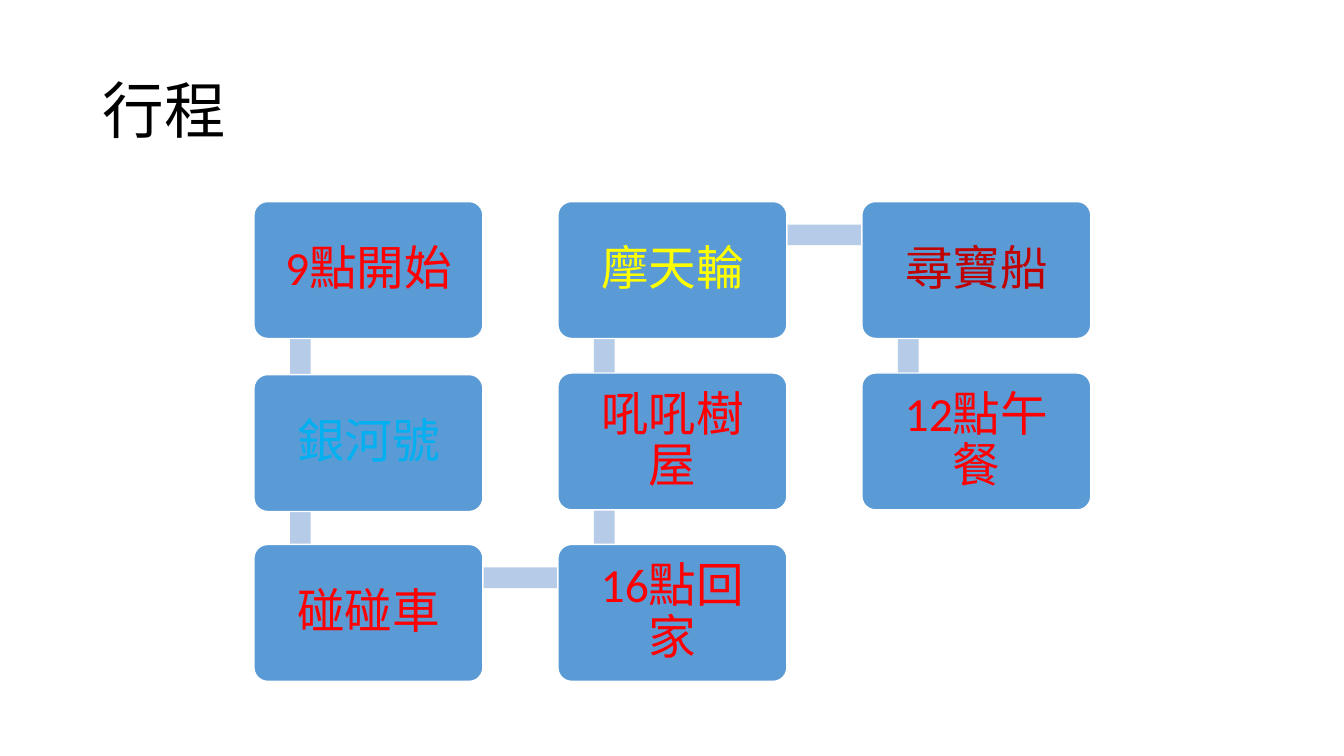
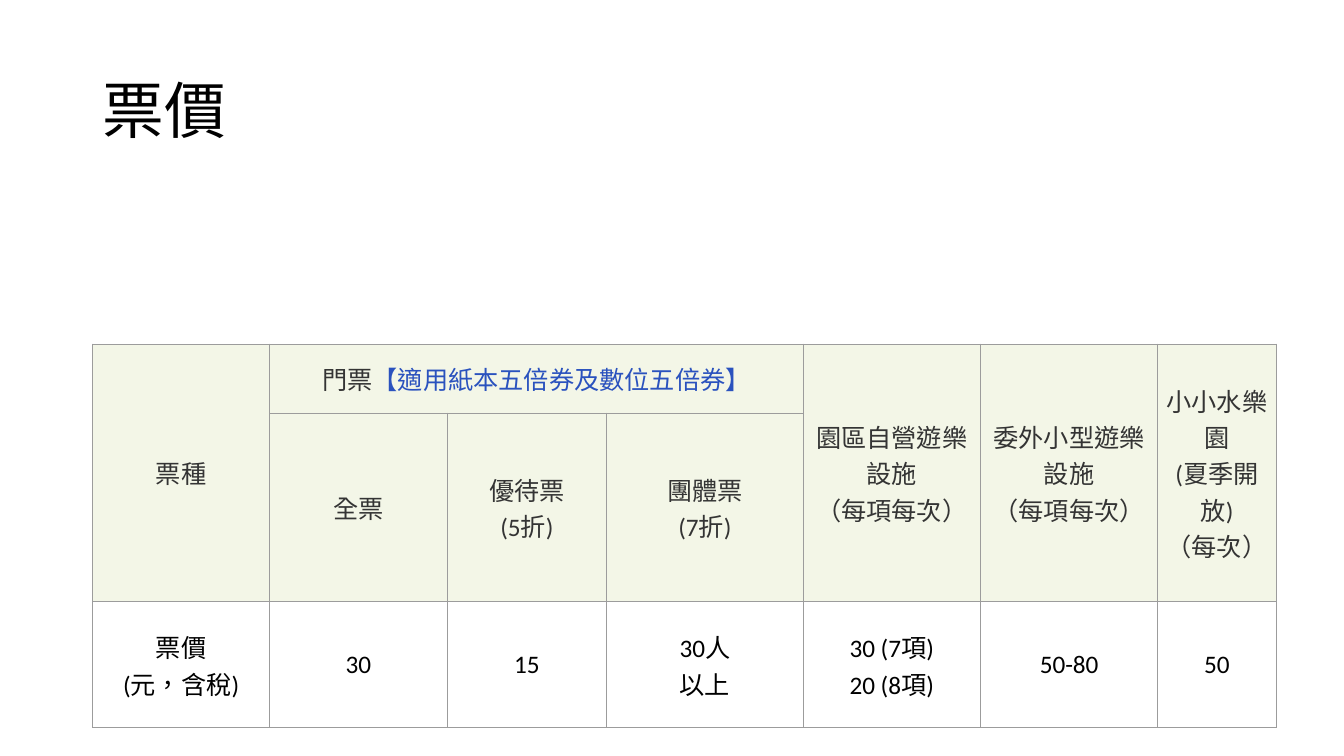
from dataclasses import dataclass
from typing import Any

from lxml import etree
from pptx import Presentation
from pptx import util as u
from pptx.dml.color import RGBColor
from pptx.enum import lang, shapes, text
from pptx.oxml import ns

COLORS = {
    "black": "000000", "white": "FFFFFF", "red": "FF0000", "dark_red": "C00000",
    "yellow": "FFFF00", "sky": "00B0F0", "box": "5B9BD5", "bar": "B5CBE7",
    "heading": "343434", "note": "2A52BE", "heading_fill": "F3F6E7", "border": "9C9C9C",
}
FONT = {"name": "Calibri", "language_id": lang.MSO_LANGUAGE_ID.TRADITIONAL_CHINESE}
TITLE_FRAME = {
    "vertical_anchor": text.MSO_ANCHOR.MIDDLE,
    "auto_size": text.MSO_AUTO_SIZE.NONE,
    "word_wrap": True,
}
MARGINS = ("margin_left", "margin_top", "margin_right", "margin_bottom")
STOP_FRAME = {
    "vertical_anchor": text.MSO_ANCHOR.MIDDLE,
    "word_wrap": True,
    **dict.fromkeys(MARGINS, u.Cm(0.46)),
}
CELL_FORMAT = {
    "vertical_anchor": text.MSO_ANCHOR.MIDDLE,
    **dict.fromkeys(MARGINS, u.Cm(0.08)),
}
TITLE_PLACE = {
    "left": u.Cm(2.33), "top": u.Cm(1.01), "width": u.Cm(29.21), "height": u.Cm(3.68),
}

GRID_LEFT, GRID_TOP = 6.4, 5.08
COLUMN_STEP, ROW_STEP = 7.66, 4.32
BOX_WIDTH, BOX_HEIGHT = 5.77, 3.45
JOINT_X, JOINT_Y = 1.17, 0.84
BAR_THICKNESS = 0.52

COLUMN_WIDTHS = (4.47, 4.47, 4.02, 4.95, 4.47, 4.47, 2.98)
ROW_HEIGHTS = (1.74, 4.72, 3.17)


@dataclass(frozen=True)
class Stop:
    label: str
    column: int
    row: int
    color: str = "red"
    shift: float = 0

    @property
    def left(self) -> float:
        return GRID_LEFT + self.column * COLUMN_STEP

    @property
    def top(self) -> float:
        return GRID_TOP + self.row * ROW_STEP + self.shift


@dataclass(frozen=True)
class Cell:
    row: int
    column: int
    label: str
    rows: int = 1
    columns: int = 1
    note: str = ""


STOPS = (
    Stop("9點開始", 0, 0),
    Stop("銀河號", 0, 1, "sky", 0.04),
    Stop("碰碰車", 0, 2),
    Stop("16點回家", 1, 2),
    Stop("吼吼樹屋", 1, 1),
    Stop("摩天輪", 1, 0, "yellow"),
    Stop("尋寶船", 2, 0, "dark_red"),
    Stop("12點午餐", 2, 1),
)
CELLS = (
    Cell(0, 0, "票種", rows=2),
    Cell(0, 1, "門票", columns=3, note="【適用紙本五倍券及數位五倍券】"),
    Cell(0, 4, "園區自營遊樂設施\v（每項每次）", rows=2),
    Cell(0, 5, "委外小型遊樂設施\v（每項每次）", rows=2),
    Cell(0, 6, "小小水樂園\v(夏季開放)\v（每次）", rows=2),
    Cell(1, 1, "全票"),
    Cell(1, 2, "優待票\v(5折)"),
    Cell(1, 3, "團體票\v(7折)"),
    Cell(2, 0, "票價\v(元，含稅)"),
    Cell(2, 1, "30"),
    Cell(2, 2, "15"),
    Cell(2, 3, "30人\v以上"),
    Cell(2, 4, "30 (7項)\n20 (8項)"),
    Cell(2, 5, "50-80"),
    Cell(2, 6, "50"),
)


def rgb(color: str) -> RGBColor:
    return RGBColor.from_string(COLORS[color])


def apply(target: Any, values: dict[str, Any]) -> None:
    for name, value in values.items():
        setattr(target, name, value)


def format_text(frame: Any, size: float, color: str, alignment: Any, spacing: float) -> None:
    for paragraph in frame.paragraphs:
        apply(paragraph, {"alignment": alignment, "line_spacing": spacing})
        for run in paragraph.runs:
            apply(run.font, {**FONT, "size": u.Pt(size), "bold": False})
            run.font.color.rgb = rgb(color)


def add_titled_slide(presentation: Any, title: str) -> Any:
    slide = presentation.slides.add_slide(presentation.slide_layouts[5])
    shape = slide.shapes.title
    apply(shape, TITLE_PLACE)
    shape.text_frame.text = title
    apply(shape.text_frame, TITLE_FRAME)
    format_text(shape.text_frame, 44, "black", text.PP_ALIGN.LEFT, 0.9)
    return slide


def add_block(slide: Any, kind: Any, left: float, top: float,
              width: float, height: float, color: str) -> Any:
    shape = slide.shapes.add_shape(kind, u.Cm(left), u.Cm(top), u.Cm(width), u.Cm(height))
    shape.shadow.inherit = False
    shape.fill.solid()
    shape.fill.fore_color.rgb = rgb(color)
    shape.line.fill.background()
    return shape


def add_bar(slide: Any, start: Stop, end: Stop) -> None:
    left = min(start.left, end.left) + JOINT_X
    top = min(start.top, end.top) + JOINT_Y
    width = abs(end.left - start.left)
    height = abs(end.top - start.top)
    half = BAR_THICKNESS / 2
    if start.column == end.column:
        place = (left - half, top, BAR_THICKNESS, height)
    else:
        place = (left, top - half, width, BAR_THICKNESS)
    add_block(slide, shapes.MSO_SHAPE.RECTANGLE, *place, "bar")


def add_stop(slide: Any, stop: Stop) -> None:
    shape = add_block(slide, shapes.MSO_SHAPE.ROUNDED_RECTANGLE, stop.left, stop.top,
                      BOX_WIDTH, BOX_HEIGHT, "box")
    shape.adjustments[0] = 0.1
    shape.line.color.rgb = rgb("white")
    shape.line.width = u.Pt(1)
    shape.text_frame.text = stop.label
    apply(shape.text_frame, STOP_FRAME)
    format_text(shape.text_frame, 34, stop.color, text.PP_ALIGN.CENTER, 0.9)


def add_borders(cell: Any) -> None:
    properties = cell._tc.get_or_add_tcPr()
    for side in ("a:lnL", "a:lnR", "a:lnT", "a:lnB"):
        line = etree.SubElement(properties, ns.qn(side), w=str(u.Pt(0.75)))
        fill = etree.SubElement(line, ns.qn("a:solidFill"))
        etree.SubElement(fill, ns.qn("a:srgbClr"), val=COLORS["border"])


def fill_cell(table: Any, entry: Cell) -> None:
    cell = table.cell(entry.row, entry.column)
    if entry.rows * entry.columns > 1:
        cell.merge(table.cell(entry.row + entry.rows - 1, entry.column + entry.columns - 1))
    cell.text_frame.text = entry.label
    if entry.note:
        cell.text_frame.paragraphs[0].add_run().text = entry.note
    color = "black" if entry.row == 2 else "heading"
    format_text(cell.text_frame, 18, color, text.PP_ALIGN.CENTER, 1.0)
    if entry.note:
        cell.text_frame.paragraphs[0].runs[-1].font.color.rgb = rgb("note")


def add_price_table(slide: Any) -> None:
    frame = slide.shapes.add_table(
        len(ROW_HEIGHTS), len(COLUMN_WIDTHS), u.Cm(2.33), u.Cm(8.67),
        u.Cm(sum(COLUMN_WIDTHS)), u.Cm(sum(ROW_HEIGHTS)))
    table = frame.table
    apply(table, {"first_row": False, "horz_banding": False})
    for column, width in zip(table.columns, COLUMN_WIDTHS):
        column.width = u.Cm(width)
    for index, (row, height) in enumerate(zip(table.rows, ROW_HEIGHTS)):
        row.height = u.Cm(height)
        for cell in row.cells:
            apply(cell, CELL_FORMAT)
            add_borders(cell)
            cell.fill.solid()
            cell.fill.fore_color.rgb = rgb("white" if index == 2 else "heading_fill")
    for entry in CELLS:
        fill_cell(table, entry)


def main() -> None:
    presentation = Presentation()
    apply(presentation, {"slide_width": u.Cm(33.87), "slide_height": u.Cm(19.05)})

    schedule = add_titled_slide(presentation, "行程")
    for start, end in zip(STOPS, STOPS[1:]):
        add_bar(schedule, start, end)
    for stop in STOPS:
        add_stop(schedule, stop)

    add_price_table(add_titled_slide(presentation, "票價"))
    presentation.save("out.pptx")


if __name__ == "__main__":
    main()
